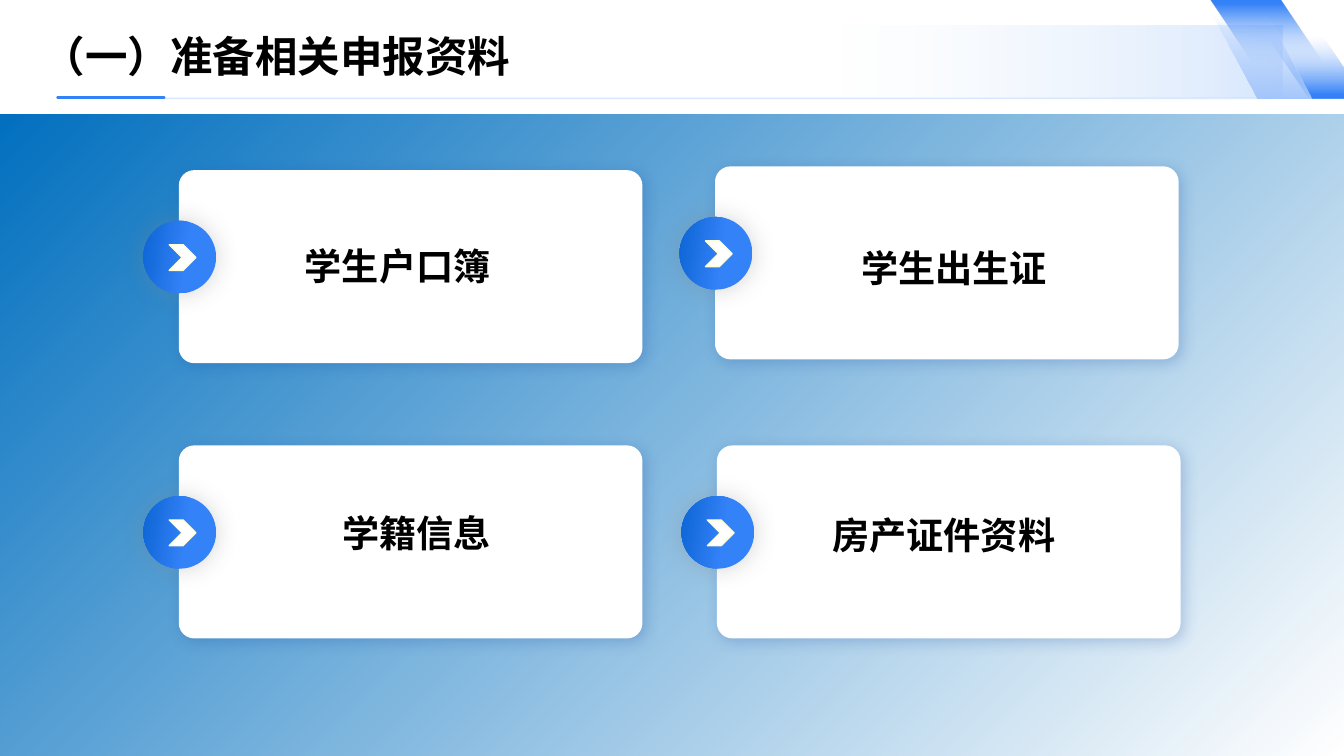
from dataclasses import dataclass
from typing import NamedTuple

from pptx import Presentation
from pptx.dml.color import RGBColor
from pptx.enum.shapes import MSO_CONNECTOR as CONN, MSO_SHAPE as SHAPE
from pptx.enum.text import MSO_AUTO_SIZE as AUTO, PP_ALIGN as ALIGN
from pptx.oxml import parse_xml
from pptx.oxml.ns import nsdecls, qn
from pptx.util import Inches, Pt


class Stop(NamedTuple):
    pos: int
    color: str
    alpha: int = 100


class Gradient(NamedTuple):
    angle: int  # clockwise degrees
    stops: tuple[Stop, ...]


class Shadow(NamedTuple):
    color: str
    alpha: int
    blur: int
    dist: int
    angle: int


class Box(NamedTuple):
    """Left, top, width and height in percent of the slide."""
    x: float
    y: float
    w: float
    h: float


class Rule(NamedTuple):
    x1: float
    x2: float
    y: float
    color: str
    width: int
    alpha: int


class Ribbon(NamedTuple):
    points: tuple[tuple[float, float], ...]
    fill: Gradient


class Card(NamedTuple):
    x: float
    y: float
    label: str
    label_box: Box
    align: ALIGN = ALIGN.LEFT


@dataclass(frozen=True)
class Theme:
    white: str = "FFFFFF"
    black: str = "000000"
    cream: str = "FFFED2"
    sky: str = "A3C6FC"
    blue: str = "3482F8"
    deep: str = "0D65D4"
    ocean: str = "0070C0"
    navy: str = "1146A2"
    gray: str = "808080"
    title_font: str = "Arial"
    body_font: str = "Noto Sans CJK SC"
    title_size: int = 32
    label_size: int = 28


T = Theme()
W, H = Inches(14.06), Inches(7.91)

BACKDROP = Box(0, 15.17, 100, 84.83)
BACKDROP_FILL = Gradient(225, (Stop(0, T.ocean, 0), Stop(100, T.ocean)))
GLOW = Box(34.07, 3.41, 61.38, 9.48)
GLOW_FILL = Gradient(0, (Stop(46, T.sky, 0), Stop(100, T.blue, 19)))
TITLE = Box(2.49, 3.41, 92.75, 8.09)
RULES = (Rule(12.02, 95.16, 13.02, T.sky, 1, 40),
         Rule(4.34, 12.16, 12.9, T.blue, 3, 100))

FADE_TO_BLUE = (Stop(35, T.sky, 0), Stop(96, T.blue))
RIBBONS = (
    Ribbon(((97.37, 13.02), (92.67, 0.51), (96.73, 0.51), (100, 9.1), (100, 13.02)),
           Gradient(90, FADE_TO_BLUE)),
    Ribbon(((95.09, 13.15), (90.11, 0), (95.31, 0), (100.28, 13.15)),
           Gradient(270, FADE_TO_BLUE)),
    Ribbon(((94.24, 1.77), (97.58, 13.02), (93.53, 13.02), (90.11, 1.77)),
           Gradient(90, (Stop(0, T.sky, 0), Stop(100, T.sky)))),
)

CARD_W, CARD_H = 34.5, 25.54
BADGE = Box(-2.63, 6.7, 5.41, 9.61)  # relative to the card's corner
CHEVRON = Box(-0.71, 9.86, 1.99, 3.41)
BADGE_FILL = Gradient(188, (Stop(41, T.blue), Stop(100, T.deep)))
CARD_SHADOW = Shadow(T.navy, 24, 12, 3, 45)
BADGE_SHADOW = Shadow(T.gray, 32, 18, 0, 358)
CARDS = (
    Card(13.3, 22.5, "学生户口簿", Box(21.98, 31.61, 16.57, 7.21)),
    Card(53.2, 22, "学生出生证", Box(63.37, 31.86, 17, 7.21)),
    Card(13.3, 58.91, "学籍信息", Box(20.34, 66.88, 21.27, 7.21), ALIGN.CENTER),
    Card(53.34, 58.91, "房产证件资料", Box(61.24, 67.13, 21.27, 7.21)),
)


def px(share: float) -> int:
    """Percent of the slide's width."""
    return round(W * share / 100)


def py(share: float) -> int:
    """Percent of the slide's height."""
    return round(H * share / 100)


def place(box: Box) -> tuple[int, int, int, int]:
    return px(box.x), py(box.y), px(box.w), py(box.h)


def color_xml(color: str, alpha: int) -> str:
    return f'<a:srgbClr val="{color}"><a:alpha val="{alpha * 1000}"/></a:srgbClr>'


def paint(sp, fill: str | Gradient, shadow: Shadow | None = None) -> None:
    """Fill a shape, drop its outline and set its shadow."""
    sp.shadow.inherit = False
    sp.line.fill.background()
    if isinstance(fill, str):
        sp.fill.solid()
        sp.fill.fore_color.rgb = RGBColor.from_string(fill)
    else:
        sp.fill.background()
        stops = "".join(f'<a:gs pos="{s.pos * 1000}">{color_xml(s.color, s.alpha)}</a:gs>'
                        for s in fill.stops)
        spPr = sp._element.spPr
        spPr.replace(spPr.find(qn("a:noFill")), parse_xml(
            f'<a:gradFill {nsdecls("a")} rotWithShape="1"><a:gsLst>{stops}</a:gsLst>'
            f'<a:lin ang="{fill.angle * 60000}" scaled="0"/></a:gradFill>'))
    if shadow:
        sp._element.spPr.find(qn("a:effectLst")).append(parse_xml(
            f'<a:outerShdw {nsdecls("a")} blurRad="{Pt(shadow.blur)}" dist="{Pt(shadow.dist)}" '
            f'dir="{shadow.angle * 60000}" algn="ctr" rotWithShape="0">'
            f'{color_xml(shadow.color, shadow.alpha)}</a:outerShdw>'))


def add_shape(slide, kind: SHAPE, box: Box, fill: str | Gradient,
              shadow: Shadow | None = None):
    sp = slide.shapes.add_shape(kind, *place(box))
    paint(sp, fill, shadow)
    return sp


def add_text(slide, box: Box, text: str, size: int, font: str, align: ALIGN) -> None:
    tf = slide.shapes.add_textbox(*place(box)).text_frame
    tf.word_wrap = True
    tf.auto_size = AUTO.SHAPE_TO_FIT_TEXT
    p = tf.paragraphs[0]
    p.text, p.alignment = text, align
    p.font.size, p.font.bold, p.font.name = Pt(size), True, font
    p.font.color.rgb = RGBColor.from_string(T.black)
    p._p.pPr.find(qn("a:defRPr")).append(
        parse_xml(f'<a:ea {nsdecls("a")} typeface="{T.body_font}"/>'))


def add_rule(slide, rule: Rule) -> None:
    c = slide.shapes.add_connector(CONN.STRAIGHT, px(rule.x1), py(rule.y),
                                   px(rule.x2), py(rule.y))
    c.line.width = Pt(rule.width)
    c.line.color.rgb = RGBColor.from_string(rule.color)
    ln = c.line._get_or_add_ln()
    ln.set("cap", "rnd")
    ln.find(qn("a:solidFill"))[0].append(
        parse_xml(f'<a:alpha {nsdecls("a")} val="{rule.alpha * 1000}"/>'))
    c._element.spPr.append(parse_xml(f'<a:effectLst {nsdecls("a")}/>'))


def add_ribbon(slide, ribbon: Ribbon) -> None:
    start, *rest = [(px(x), py(y)) for x, y in ribbon.points]
    builder = slide.shapes.build_freeform(*start)
    builder.add_line_segments(rest, close=True)
    paint(builder.convert_to_shape(), ribbon.fill)


def add_card(slide, card: Card) -> None:
    def on_card(box: Box) -> Box:
        return box._replace(x=card.x + box.x, y=card.y + box.y)

    panel = add_shape(slide, SHAPE.ROUNDED_RECTANGLE, Box(card.x, card.y, CARD_W, CARD_H),
                      T.white, CARD_SHADOW)
    panel.adjustments[0] = 0.08
    add_shape(slide, SHAPE.OVAL, on_card(BADGE), BADGE_FILL, BADGE_SHADOW)
    chevron = add_shape(slide, SHAPE.CHEVRON, on_card(CHEVRON), T.white)
    chevron.line.color.rgb = RGBColor.from_string(T.cream)
    chevron.line.width = Pt(1)
    add_text(slide, card.label_box, card.label, T.label_size, T.body_font, card.align)


def main() -> None:
    prs = Presentation()
    prs.slide_width, prs.slide_height = W, H
    slide = prs.slides.add_slide(prs.slide_layouts[6])
    add_shape(slide, SHAPE.RECTANGLE, BACKDROP, BACKDROP_FILL)
    add_shape(slide, SHAPE.RECTANGLE, GLOW, GLOW_FILL)
    for rule in RULES:
        add_rule(slide, rule)
    add_text(slide, TITLE, "（一）准备相关申报资料", T.title_size, T.title_font, ALIGN.LEFT)
    for card in CARDS:
        add_card(slide, card)
    for ribbon in RIBBONS:
        add_ribbon(slide, ribbon)
    prs.save("out.pptx")


if __name__ == "__main__":
    main()
